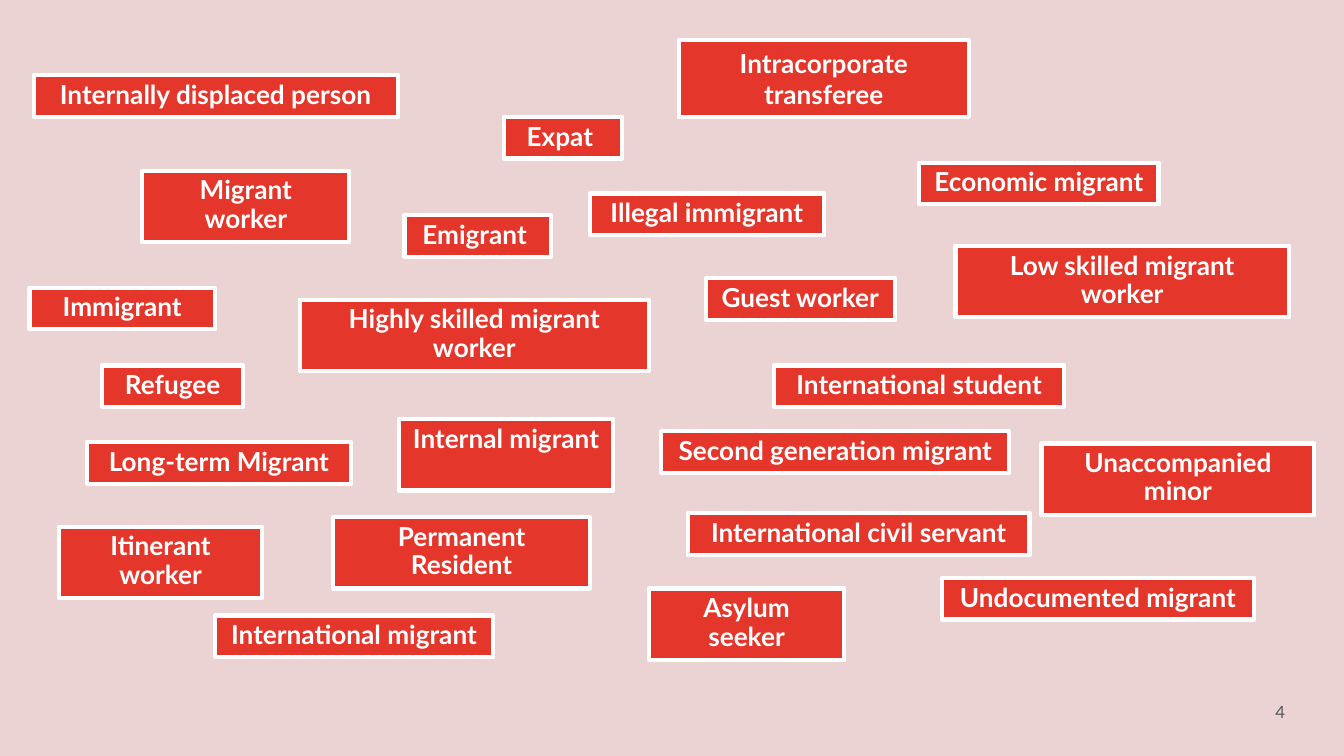
from pptx import Presentation
from pptx.dml.color import RGBColor
from pptx.enum.shapes import MSO_SHAPE
from pptx.enum.text import MSO_ANCHOR, MSO_AUTO_SIZE, PP_ALIGN
from pptx.util import Inches, Pt

RED, WHITE, GREY, PINK = "E5362B", "FFFFFF", "595959", "EBD3D3"
ONE_LINE, TWO_LINES = 0.31, 0.53
TERM_FONT = {"name": "Lato", "size": Pt(14), "bold": True}
NUMBER_FONT = {"name": "Lato", "size": Pt(9)}
TERM_FRAME = {"word_wrap": True, "vertical_anchor": MSO_ANCHOR.TOP,
              "auto_size": MSO_AUTO_SIZE.SHAPE_TO_FIT_TEXT}
NUMBER_FRAME = {"word_wrap": True, "vertical_anchor": MSO_ANCHOR.MIDDLE,
                "margin_top": Inches(0.1), "margin_bottom": Inches(0.1)}

TERMS = [
    ("Economic migrant", 6.84, 1.21, 1.78, ONE_LINE),
    ("International migrant", 1.6, 4.58, 2.07, ONE_LINE),
    ("Emigrant ", 3.01, 1.6, 1.09, ONE_LINE),
    ("Immigrant", 0.22, 2.14, 1.38, ONE_LINE),
    ("Asylum seeker", 4.83, 4.38, 1.45, TWO_LINES),
    ("Refugee", 0.76, 2.72, 1.05, ONE_LINE),
    ("Internal migrant", 2.97, 3.12, 1.59, TWO_LINES),
    ("Highly skilled migrant worker", 2.23, 2.23, 2.6, TWO_LINES),
    ("Illegal immigrant", 4.39, 1.44, 1.74, ONE_LINE),
    ("Guest worker", 5.25, 2.07, 1.41, ONE_LINE),
    ("Itinerant worker", 0.44, 3.92, 1.51, TWO_LINES),
    ("Expat ", 3.75, 0.87, 0.88, ONE_LINE),
    ("International civil servant", 5.12, 3.82, 2.54, ONE_LINE),
    ("International student", 5.76, 2.72, 2.16, ONE_LINE),
    ("Permanent Resident", 2.48, 3.85, 1.91, TWO_LINES),
    ("Undocumented migrant", 7.01, 4.3, 2.32, ONE_LINE),
    ("Internally displaced person", 0.25, 0.56, 2.71, ONE_LINE),
    ("Migrant worker", 1.06, 1.27, 1.54, TWO_LINES),
    ("Long-term Migrant", 0.65, 3.29, 1.96, ONE_LINE),
    ("Low skilled migrant worker", 7.11, 1.83, 2.48, TWO_LINES),
    ("Intracorporate transferee", 5.05, 0.3, 2.16, 0.57, 1.0),
    ("Second generation migrant", 4.92, 3.21, 2.59, ONE_LINE),
    ("Unaccompanied minor", 7.75, 3.3, 2.03, TWO_LINES),
]


def rgb(value):
    """Turn a hex string into a colour."""
    return RGBColor.from_string(value)


def apply(target, values):
    """Set each attribute named in a dict of format values."""
    for name, value in values.items():
        setattr(target, name, value)


def write(sp, text, frame, font, color, paragraph):
    """Put one formatted paragraph into a shape."""
    tf = sp.text_frame
    apply(tf, frame)
    p = tf.paragraphs[0]
    apply(p, paragraph)
    r = p.add_run()
    r.text = text
    apply(r.font, font)
    r.font.color.rgb = rgb(color)


def add_term(s, text, left, top, width, height, spacing=0.9):
    """Add a red box with a white outline and a centred term."""
    sp = s.shapes.add_shape(MSO_SHAPE.RECTANGLE, Inches(left), Inches(top),
                            Inches(width), Inches(height))
    sp.shadow.inherit = False
    sp.fill.solid()
    sp.fill.fore_color.rgb = rgb(RED)
    sp.line.color.rgb = rgb(WHITE)
    sp.line.width = Pt(2.25)
    write(sp, text, TERM_FRAME, TERM_FONT, WHITE,
          {"alignment": PP_ALIGN.CENTER, "line_spacing": spacing})


def add_page_number(s, number):
    """Add the page number at the lower right."""
    sp = s.shapes.add_textbox(Inches(9.06), Inches(5.08), Inches(0.6), Inches(0.43))
    write(sp, number, NUMBER_FRAME, NUMBER_FONT, GREY, {"alignment": PP_ALIGN.RIGHT})


def main():
    """Build the slide of migration terms."""
    prs = Presentation()
    prs.slide_width = Inches(10)
    prs.slide_height = prs.slide_width * 9 // 16
    s = prs.slides.add_slide(prs.slide_layouts[6])
    s.background.fill.solid()
    s.background.fill.fore_color.rgb = rgb(PINK)
    add_page_number(s, "4")
    for term in TERMS:
        add_term(s, *term)
    prs.save("out.pptx")


if __name__ == "__main__":
    main()
